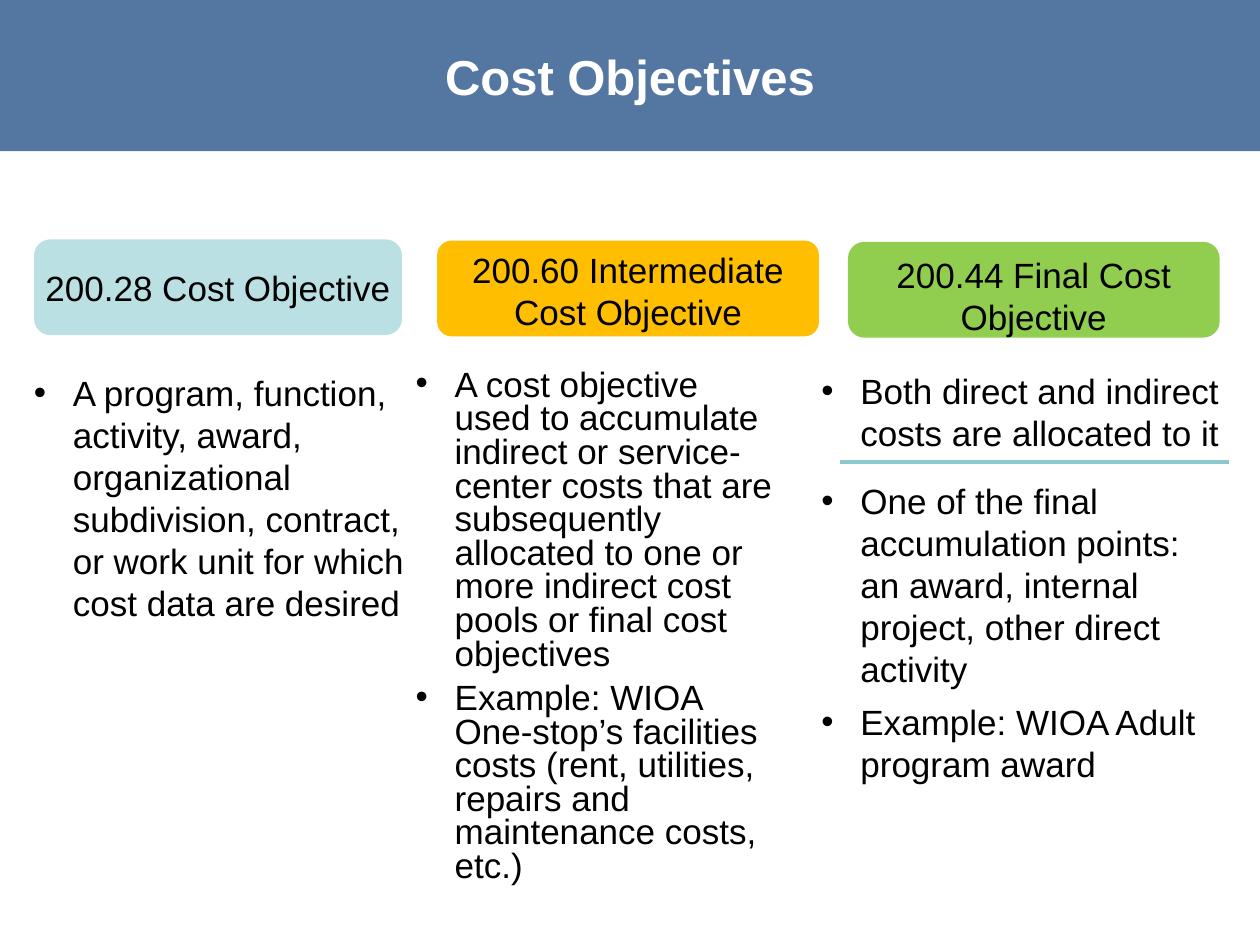
from lxml.etree import SubElement
from pptx import Presentation
from pptx.dml.color import RGBColor
from pptx.enum.shapes import MSO_CONNECTOR, MSO_SHAPE
from pptx.enum.text import MSO_ANCHOR, PP_ALIGN
from pptx.oxml.ns import qn
from pptx.util import Inches, Pt

BANNER_BLUE = RGBColor(0x37, 0x60, 0x92)
PALE_TEAL = RGBColor(0xBB, 0xE0, 0xE3)
AMBER = RGBColor(0xFF, 0xBE, 0x00)
GREEN = RGBColor(0x91, 0xCE, 0x4F)
RULE_TEAL = RGBColor(0x8C, 0xC7, 0xCE)
WHITE = RGBColor(0xFF, 0xFF, 0xFF)
BLACK = RGBColor(0x00, 0x00, 0x00)

prs = Presentation()
prs.slide_width, prs.slide_height = Inches(10), Inches(7.5)
slide = prs.slides.add_slide(prs.slide_layouts[6])

# Grid of 100 columns by 75 rows
COL = prs.slide_width / 100
ROW = prs.slide_height / 75


def grid(*cells):
    """Turn alternating column and row counts into lengths."""
    return [round(n * (ROW if i % 2 else COL)) for i, n in enumerate(cells)]


def add_panel(preset, cells, fill, text, size, color, bold=False):
    panel = slide.shapes.add_shape(preset, *grid(*cells))
    panel.shadow.inherit = False
    panel.fill.solid()
    panel.fill.fore_color.rgb = fill
    panel.line.fill.background()
    frame = panel.text_frame
    frame.margin_left = frame.margin_right = Inches(0.05)
    frame.word_wrap = True
    frame.vertical_anchor = MSO_ANCHOR.MIDDLE
    frame.text = text
    label = frame.paragraphs[0]
    label.alignment = PP_ALIGN.CENTER
    label.font.name, label.font.size = "Arial", Pt(size)
    label.font.bold, label.font.color.rgb = bold, color
    return panel


banner = add_panel(MSO_SHAPE.RECTANGLE, (0, 0, 100, 12), BANNER_BLUE,
                   "Cost Objectives", 28, WHITE, bold=True)
banner_color = banner.fill._xPr.find(qn("a:solidFill"))[0]
SubElement(banner_color, qn("a:alpha"), val="85000")

# Cell position, colour, corner rounding, top inset and wording of each heading
headings = [
    ((2.7, 19, 29.2, 7.6), PALE_TEAL, 0.17, 0.05, "200.28 Cost Objective"),
    ((34.7, 19.1, 30.3, 7.6), AMBER, 0.15, 0.08,
     "200.60 Intermediate Cost Objective"),
    ((67.3, 19.2, 29.5, 7.6), GREEN, 0.17, 0.14, "200.44 Final Cost Objective"),
]
for cells, fill, rounding, top_inset, wording in headings:
    heading = add_panel(MSO_SHAPE.ROUNDED_RECTANGLE, cells, fill, wording, 20, BLACK)
    heading.adjustments[0] = rounding
    heading.text_frame.margin_top = Inches(top_inset)

# Cell position, line spacing and bullets of each description
descriptions = [
    ((1.7, 29, 32.7, 21.2), 1.0, [
        "A program, function, activity, award, organizational subdivision, "
        "contract, or work unit for which cost data are desired"]),
    ((32, 28.9, 30.5, 42.4), 0.8, [
        "A cost objective used to accumulate indirect or service-center costs "
        "that are subsequently allocated to one or more indirect cost pools or "
        "final cost objectives",
        "Example: WIOA One-stop’s facilities costs (rent, utilities, repairs "
        "and maintenance costs, etc.)"]),
    ((64.2, 28.8, 34.2, 7.7), 1.0, [
        "Both direct and indirect costs are allocated to it"]),
    ((64.2, 37.6, 34.2, 25.4), 1.0, [
        "One of the final accumulation points: an award, internal project, "
        "other direct activity",
        "Example: WIOA Adult program award"]),
]
for cells, spacing, bullets in descriptions:
    frame = slide.shapes.add_textbox(*grid(*cells)).text_frame
    frame.word_wrap = True
    frame.text = "\n".join(bullets)
    for i, point in enumerate(frame.paragraphs):
        point.line_spacing = spacing
        point.space_before = Pt(6 if i else 0)
        properties = point._p.get_or_add_pPr()
        properties.set("marL", str(Inches(0.31)))
        properties.set("indent", str(-Inches(0.31)))
        SubElement(properties, qn("a:buFont"), typeface="Arial")
        SubElement(properties, qn("a:buChar"), char="•")
        point.font.name, point.font.size = "Arial", Pt(20)
        point.font.color.rgb = BLACK

divider = slide.shapes.add_connector(MSO_CONNECTOR.STRAIGHT,
                                     *grid(66.7, 36.7, 97.5, 36.7))
divider.line.color.rgb = RULE_TEAL
divider.line.width = Pt(2.25)
SubElement(divider._element.spPr, qn("a:effectLst"))

prs.save("out.pptx")
